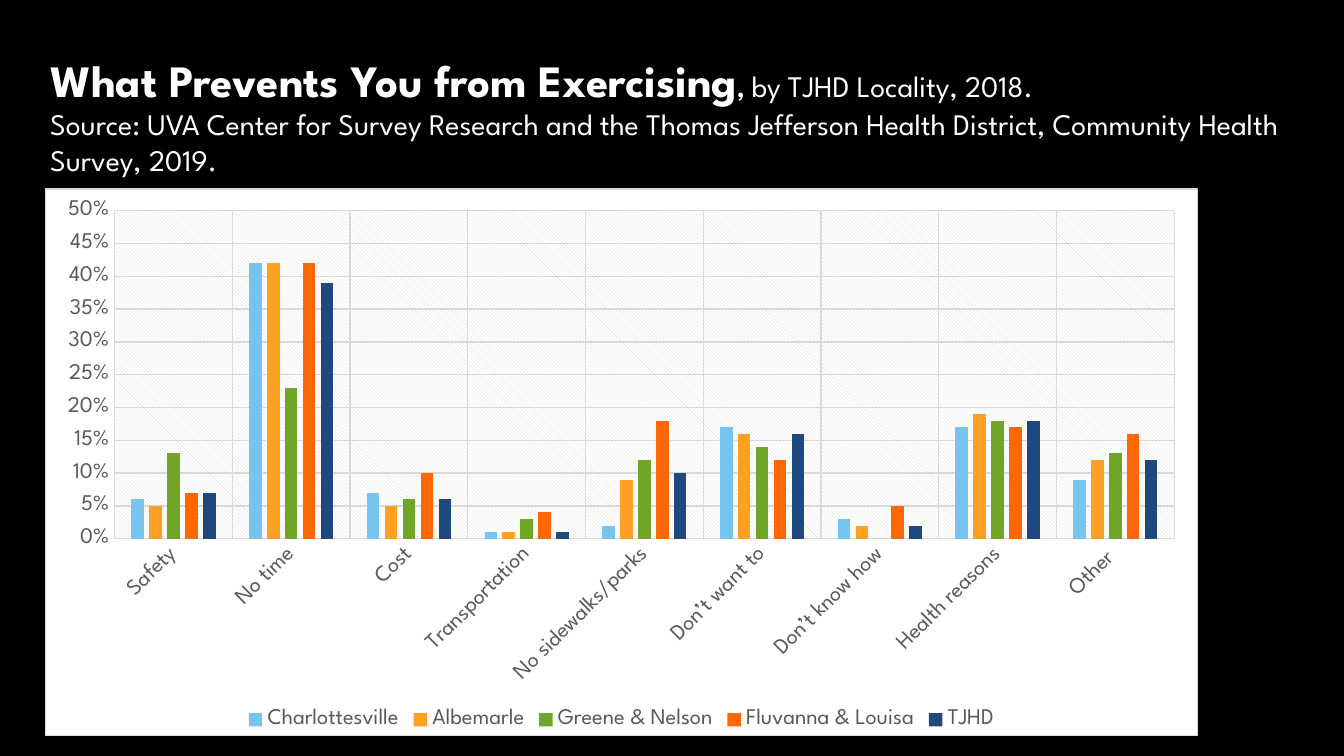
import pptx
import pptx.chart.data
import pptx.dml.color
import pptx.enum.chart
import pptx.enum.shapes
import pptx.enum.text
import pptx.oxml
import pptx.oxml.ns
import pptx.util

WIDTH = pptx.util.Inches(10)
HEIGHT = WIDTH * 9 // 16
MARGIN = 1 / 30
FACE = "League Spartan"
WHITE, BLACK, GRID, LABEL = "FFFFFF", "000000", "D9D9D9", "595959"
REASONS = ["Safety", "No time", "Cost", "Transportation", "No sidewalks/parks",
           "Don’t want to", "Don’t know how", "Health reasons", "Other "]
LOCALITIES = [
    ("Charlottesville", "76C5EF", [0.06, 0.42, 0.07, 0.01, 0.02, 0.17, 0.03, 0.17, 0.09]),
    ("Albemarle", "FEA022", [0.05, 0.42, 0.05, 0.01, 0.09, 0.16, 0.02, 0.19, 0.12]),
    ("Greene & Nelson", "70A525", [0.13, 0.23, 0.06, 0.03, 0.12, 0.14, 0, 0.18, 0.13]),
    ("Fluvanna & Louisa", "FF6700", [0.07, 0.42, 0.1, 0.04, 0.18, 0.12, 0.05, 0.17, 0.16]),
    ("TJHD", "1F497D", [0.07, 0.39, 0.06, 0.01, 0.1, 0.16, 0.02, 0.18, 0.12]),
]


def color(value):
    """Turn a hex string into a colour."""
    return pptx.dml.color.RGBColor.from_string(value)


def share(left, top, width, height):
    """Turn shares of the slide's size into lengths."""
    return [int(part * whole) for part, whole in
            zip((left, top, width, height), (WIDTH, HEIGHT, WIDTH, HEIGHT))]


def paint(fill, value):
    """Make a fill solid."""
    fill.solid()
    fill.fore_color.rgb = color(value)


def style_font(font, size, value, bold=False):
    """Set the face, size, colour and weight of a font."""
    font.name, font.size, font.bold = FACE, pptx.util.Pt(size), bold
    font.color.rgb = color(value)


def add_text(paragraph, text, size=16, value=WHITE, bold=False):
    """Append a formatted run to a paragraph."""
    run = paragraph.add_run()
    run.text = text
    style_font(run.font, size, value, bold)


def style_line(line, value=GRID):
    """Give a line its colour and thin width."""
    line.color.rgb = color(value)
    line.width = pptx.util.Pt(0.75)


def chart_xml(tag, content):
    """Build a chart element from its inner XML."""
    names = pptx.oxml.ns.nsdecls("c", "a")
    return pptx.oxml.parse_xml(f"<c:{tag} {names}>{content}</c:{tag}>")


def solid_xml(value):
    """Describe a solid fill in XML."""
    return f'<a:solidFill><a:srgbClr val="{value}"/></a:solidFill>'


def add_heading(slide):
    """Add the title and its source line."""
    heading = slide.shapes.add_shape(pptx.enum.shapes.MSO_SHAPE.RECTANGLE,
                                     *share(MARGIN, 0.062, 1 - 2 * MARGIN, 0.164))
    heading.shadow.inherit = False
    paint(heading.fill, BLACK)
    heading.line.fill.background()
    frame = heading.text_frame
    frame.word_wrap = True
    frame.vertical_anchor = pptx.enum.text.MSO_ANCHOR.TOP
    frame.margin_left = frame.margin_right = pptx.util.Inches(0.04)
    frame.margin_top = frame.margin_bottom = pptx.util.Inches(0.04)
    title, source = frame.paragraphs[0], frame.add_paragraph()
    title.alignment = source.alignment = pptx.enum.text.PP_ALIGN.LEFT
    add_text(title, "What Prevents You from Exercising", size=24, bold=True)
    add_text(title, ", ", size=14, bold=True)
    add_text(title, "by TJHD Locality, 2018.")
    add_text(source, "Source: UVA Center for Survey Research and the Thomas Jefferson "
                     "Health District, Community Health Survey, 2019.")


def style_axis(axis):
    """Give an axis its labels and grid."""
    ticks = pptx.enum.chart.XL_TICK_MARK
    axis.major_tick_mark = axis.minor_tick_mark = ticks.NONE
    axis.has_major_gridlines = True
    style_line(axis.major_gridlines.format.line)
    style_font(axis.tick_labels.font, 12, LABEL)


def style_areas(chart):
    """Set the chart background, hatched plot area and plot position."""
    space = chart._chartSpace
    border = f'<a:ln w="9525">{solid_xml(GRID)}</a:ln>'
    space.chart.addnext(chart_xml("spPr", solid_xml(WHITE) + border))
    area = space.chart.plotArea
    for layout in area.findall(pptx.oxml.ns.qn("c:layout")):
        area.remove(layout)
    place = '<c:layoutTarget val="inner"/><c:xMode val="edge"/><c:yMode val="edge"/>'
    place += "".join(f'<c:{side} val="{part}"/>' for side, part in
                     zip("xywh", (0.06, 0.04, 0.92, 0.6)))
    area.insert(0, chart_xml("layout", f"<c:manualLayout>{place}</c:manualLayout>"))
    area.append(chart_xml("spPr", '<a:pattFill prst="ltDnDiag">'
                          f'<a:fgClr><a:srgbClr val="{GRID}"/></a:fgClr>'
                          f'<a:bgClr><a:srgbClr val="{WHITE}"/></a:bgClr></a:pattFill>'))


def add_barrier_chart(slide):
    """Add the column chart of barriers by locality."""
    answers = pptx.chart.data.CategoryChartData(number_format="0%")
    answers.categories = REASONS
    for name, _, values in LOCALITIES:
        answers.add_series(name, values)
    chart = slide.shapes.add_chart(pptx.enum.chart.XL_CHART_TYPE.COLUMN_CLUSTERED,
                                   *share(MARGIN, 0.249, 0.858, 0.725), answers).chart
    style_font(chart.font, 10, WHITE)
    chart.has_title = False
    chart.has_legend = True
    chart.legend.position = pptx.enum.chart.XL_LEGEND_POSITION.BOTTOM
    chart.legend.include_in_layout = False
    style_font(chart.legend.font, 12, LABEL)
    bars = chart.plots[0]
    bars.gap_width, bars.overlap, bars.vary_by_categories = 267, -43, False
    for series, (_, value, _) in zip(bars.series, LOCALITIES):
        paint(series.format.fill, value)
    reasons, percent = chart.category_axis, chart.value_axis
    style_axis(reasons)
    style_axis(percent)
    style_line(reasons.format.line)
    reasons._element.txPr.bodyPr.set("rot", "-2700000")
    percent.format.line.fill.background()
    percent.minimum_scale, percent.maximum_scale, percent.major_unit = 0, 0.5, 0.05
    percent.tick_labels.number_format = "0%"
    percent.tick_labels.number_format_is_linked = False
    style_areas(chart)


def main():
    """Build and save the slide."""
    deck = pptx.Presentation()
    deck.slide_width, deck.slide_height = WIDTH, HEIGHT
    slide = deck.slides.add_slide(deck.slide_layouts[6])
    paint(slide.background.fill, BLACK)
    add_heading(slide)
    add_barrier_chart(slide)
    deck.save("out.pptx")


if __name__ == "__main__":
    main()
